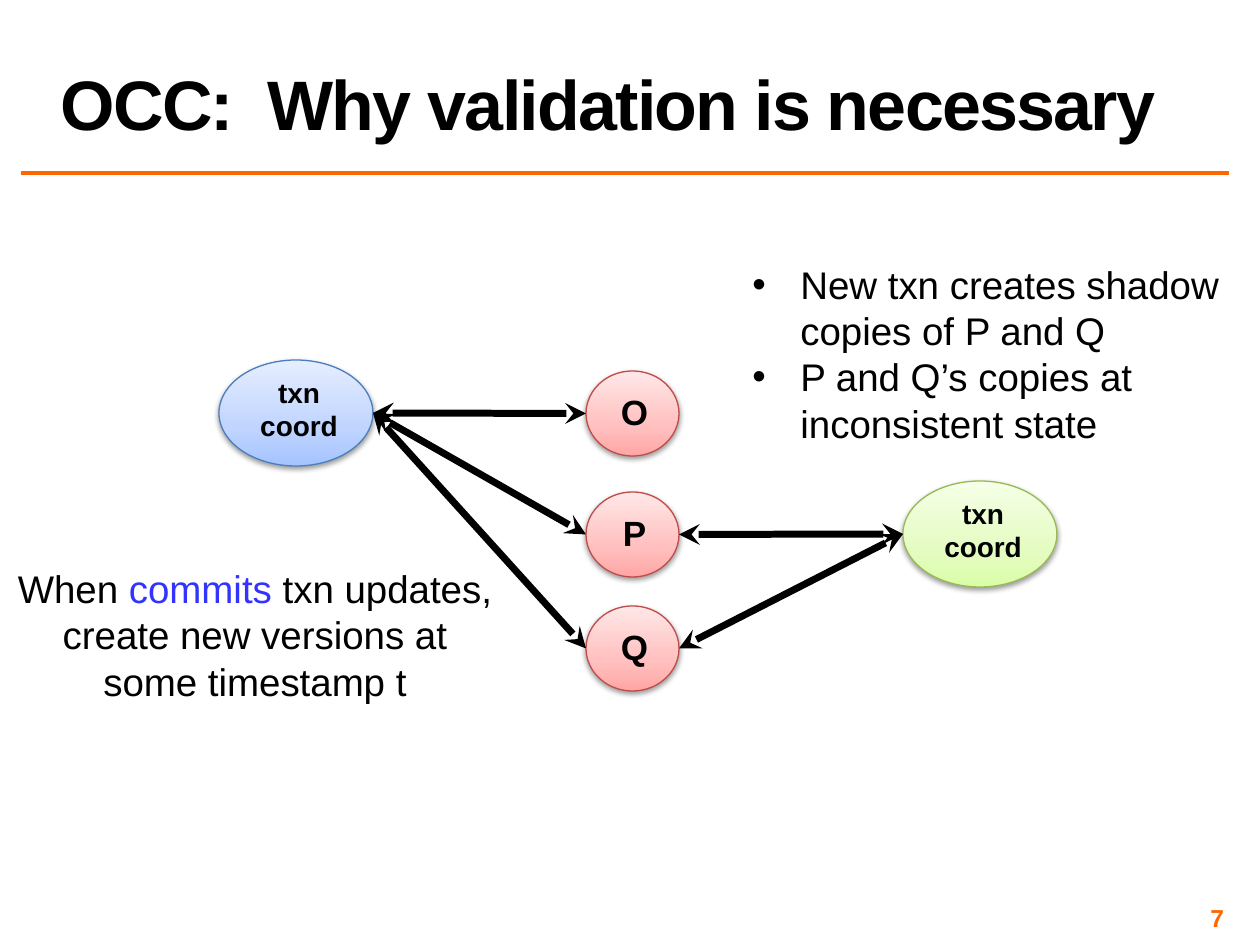
"""Build the slide on why optimistic concurrency control needs validation."""
from lxml.etree import SubElement
from pptx import Presentation
from pptx.dml.color import RGBColor
from pptx.enum.shapes import MSO_CONNECTOR, MSO_SHAPE
from pptx.enum.text import MSO_ANCHOR, MSO_AUTO_SIZE, PP_ALIGN
from pptx.oxml import parse_xml
from pptx.oxml.ns import nsdecls, qn
from pptx.util import Emu, Pt

EMU_PER_PX = 914400 / 126
FONT = "Arial"
BLACK = RGBColor(0x00, 0x00, 0x00)
ORANGE = RGBColor(0xFF, 0x66, 0x00)
COMMIT_BLUE = RGBColor(0x33, 0x33, 0xFF)
BLUE_LINE = RGBColor(0x4B, 0x7E, 0xBC)
RED_LINE = RGBColor(0xBF, 0x4C, 0x48)
GREEN_LINE = RGBColor(0x98, 0xB9, 0x55)
BLUE_STOPS = (RGBColor(0xA4, 0xC4, 0xFF), RGBColor(0xBF, 0xD4, 0xFF), RGBColor(0xE6, 0xEE, 0xFF))
RED_STOPS = (RGBColor(0xFF, 0xA6, 0xA5), RGBColor(0xFF, 0xC0, 0xBF), RGBColor(0xFF, 0xE7, 0xE7))
GREEN_STOPS = (RGBColor(0xDA, 0xFD, 0xA7), RGBColor(0xE4, 0xFC, 0xC2), RGBColor(0xF5, 0xFF, 0xE7))
STOP_POSITIONS = (0, 35000, 100000)


def px(length):
    return Emu(round(length * EMU_PER_PX))


def style_span(span, size, color=BLACK, bold=False):
    span.font.name = FONT
    span.font.size = Pt(size)
    span.font.bold = bold
    span.font.color.rgb = color


def add_text(shapes, bounds, text, size, color=BLACK, bold=False, align=PP_ALIGN.CENTER):
    box = shapes.add_textbox(*map(px, bounds))
    frame = box.text_frame
    frame.word_wrap = True
    frame.text = text
    for para in frame.paragraphs:
        para.alignment = align
        for span in para.runs:
            style_span(span, size, color, bold)
    return frame


def add_title(page, text):
    title = page.shapes.title
    title.left, title.top, title.width, title.height = map(px, (48, 3, 1181, 147))
    frame = title.text_frame
    frame.text = text
    frame.auto_size = MSO_AUTO_SIZE.NONE
    frame.vertical_anchor = MSO_ANCHOR.BOTTOM
    para = frame.paragraphs[0]
    para.alignment = PP_ALIGN.LEFT
    para.line_spacing = 0.8
    style_span(para.runs[0], 40, bold=True)
    para.runs[0].font._element.set("spc", "-100")


def add_line(page, start, end, color, width, arrows=False):
    line = page.shapes.add_connector(MSO_CONNECTOR.STRAIGHT, *start, *end)
    line.line.color.rgb = color
    line.line.width = Pt(width)
    if arrows:
        for tag in ("a:headEnd", "a:tailEnd"):
            SubElement(line.line._get_or_add_ln(), qn(tag), type="stealth")
    SubElement(line._element.spPr, qn("a:effectLst"))


def add_gradient(shape, stops):
    shape.fill.gradient()
    shape.fill.gradient_angle = 90
    stop_list = shape._element.spPr.find(qn("a:gradFill")).find(qn("a:gsLst"))
    for stop in list(stop_list):
        stop_list.remove(stop)
    for position, color in zip(STOP_POSITIONS, stops):
        stop = SubElement(stop_list, qn("a:gs"), pos=str(position))
        SubElement(stop, qn("a:srgbClr"), val=str(color))


def add_shadow(shape):
    shape._element.spPr.append(parse_xml(
        f'<a:effectLst {nsdecls("a")}><a:outerShdw blurRad="40000" dist="20000" '
        'dir="5400000" rotWithShape="0"><a:srgbClr val="000000"><a:alpha val="38000"/>'
        '</a:srgbClr></a:outerShdw></a:effectLst>'))


def add_node(page, bounds, label_bounds, text, size, stops, line_color):
    group = page.shapes.add_group_shape()
    oval = group.shapes.add_shape(MSO_SHAPE.OVAL, *map(px, bounds))
    add_gradient(oval, stops)
    oval.line.color.rgb = line_color
    oval.line.width = Pt(0.75)
    add_shadow(oval)
    add_text(group.shapes, label_bounds, text, size, bold=True)
    return oval


def add_coordinator(page, left, top, stops, line_color):
    return add_node(page, (left, top, 154, 106), (left + 20, top + 9, 120, 81),
                    "txn coord", 16, stops, line_color)


def add_item(page, top, name):
    return add_node(page, (586, top, 93, 85), (607, top + 13, 55, 55),
                    name, 20, RED_STOPS, RED_LINE)


def left_side(oval):
    return oval.left, oval.top + oval.height // 2


def right_side(oval):
    return oval.left + oval.width, oval.top + oval.height // 2


def add_commit_note(page):
    frame = add_text(page.shapes, (3, 559, 504, 152),
                     "When \ncreate new versions at some timestamp t", 22)
    for text, color in (("commits ", COMMIT_BLUE), ("txn updates,", BLACK)):
        span = frame.paragraphs[0].add_run()
        span.text = text
        style_span(span, 22, color)


def add_bullets(page, lines):
    frame = add_text(page.shapes, (740, 255, 509, 199), "\n".join(lines), 22,
                     align=PP_ALIGN.LEFT)
    for para in frame.paragraphs:
        properties = para._p.get_or_add_pPr()
        properties.set("marL", str(px(48)))
        properties.set("indent", str(px(-48)))
        SubElement(properties, qn("a:buFont"), typeface=FONT)
        SubElement(properties, qn("a:buChar"), char="•")


def add_page_number(page, text):
    frame = add_text(page.shapes, (935, 903, 294, 29), text, 14, ORANGE, True, PP_ALIGN.RIGHT)
    frame.vertical_anchor = MSO_ANCHOR.MIDDLE
    frame.margin_left = frame.margin_right = frame.margin_top = frame.margin_bottom = px(5)


def main():
    deck = Presentation()
    deck.slide_width, deck.slide_height = px(1260), px(945)
    page = deck.slides.add_slide(deck.slide_layouts[5])
    add_title(page, "OCC:  Why validation is necessary")
    add_line(page, (px(21), px(173)), (px(1229), px(173)), ORANGE, 2)
    add_page_number(page, "7")

    writer = add_coordinator(page, 219, 360, BLUE_STOPS, BLUE_LINE)
    items = [add_item(page, top, name) for top, name in ((371, "O"), (492, "P"), (606, "Q"))]
    add_commit_note(page)
    add_bullets(page, ("New txn creates shadow copies of P and Q",
                       "P and Q’s copies at inconsistent state"))
    reader = add_coordinator(page, 903, 481, GREEN_STOPS, GREEN_LINE)

    for item in items:
        add_line(page, right_side(writer), left_side(item), BLACK, 4, arrows=True)
    for item in items[1:]:
        add_line(page, left_side(reader), right_side(item), BLACK, 4, arrows=True)
    deck.save("out.pptx")


if __name__ == "__main__":
    main()
